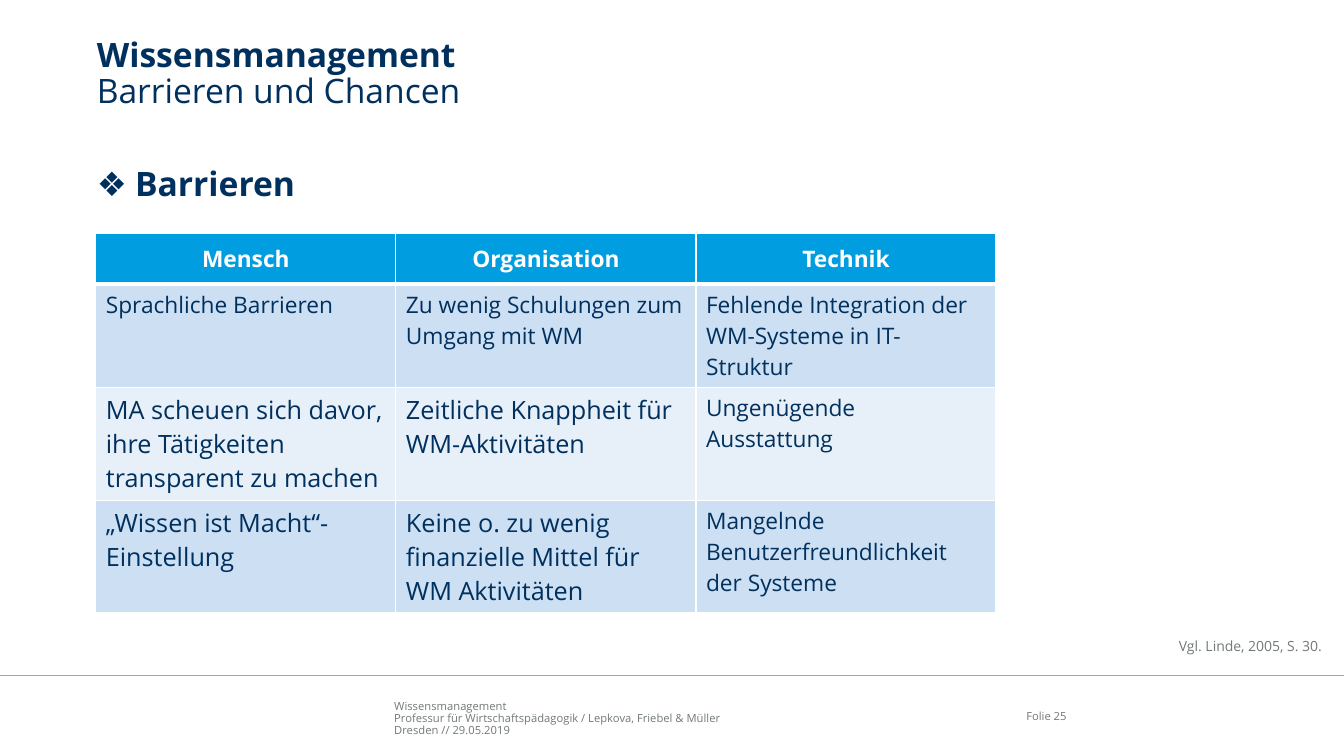
import pptx
import pptx.util
import pptx.dml.color
import pptx.enum.shapes
import pptx.enum.text
import pptx.oxml
import pptx.oxml.ns
from lxml import etree

Inches = pptx.util.Inches
Pt = pptx.util.Pt
RGBColor = pptx.dml.color.RGBColor
ALIGN = pptx.enum.text.PP_ALIGN
ANCHOR = pptx.enum.text.MSO_ANCHOR

NAVY = RGBColor(0x00, 0x30, 0x5E)
GREY = RGBColor(0x72, 0x78, 0x79)
RULE_GREY = RGBColor(0xA6, 0xA6, 0xA6)
CYAN = RGBColor(0x00, 0x9E, 0xE0)
BAND_DARK = RGBColor(0xCC, 0xDF, 0xF3)
BAND_LIGHT = RGBColor(0xE7, 0xF0, 0xF9)
WHITE = RGBColor(0xFF, 0xFF, 0xFF)

FRAME_FORMAT = {
    "margin_left": 0, "margin_top": 0, "margin_right": 0, "margin_bottom": 0,
    "word_wrap": True, "auto_size": pptx.enum.text.MSO_AUTO_SIZE.NONE,
}
FOOTER_LINES = [
    "Wissensmanagement",
    "Professur für Wirtschaftspädagogik / Lepkova, Friebel & Müller",
    "Dresden // 29.05.2019",
]
HEADINGS = ["Mensch", "Organisation", "Technik"]
BARRIERS = [
    [("Sprachliche Barrieren", 16.2),
     ("Zu wenig Schulungen zum Umgang mit WM", 16.2),
     ("Fehlende Integration der WM-Systeme in IT-Struktur", 16.2)],
    [("MA scheuen sich davor, ihre Tätigkeiten transparent zu machen", 18),
     ("Zeitliche Knappheit für WM-Aktivitäten", 18),
     ("Ungenügende Ausstattung", 16.2)],
    [("„Wissen ist Macht“- Einstellung", 18),
     ("Keine o. zu wenig finanzielle Mittel für WM Aktivitäten", 18),
     ("Mangelnde Benutzerfreundlichkeit der Systeme", 16.2)],
]
ROW_HEIGHTS = [0.5, 1.01, 1.12, 1.12]


def apply_format(target, values):
    for name, value in values.items():
        setattr(target, name, value)


def add_run(paragraph, text, size, color, bold=False):
    run = paragraph.add_run()
    run.text = text
    apply_format(run.font, {"name": "Open Sans", "size": Pt(size), "bold": bold})
    run.font.color.rgb = color


def place(shape, box, anchor=ANCHOR.TOP):
    lengths = [Inches(value) for value in box]
    apply_format(shape, dict(zip(("left", "top", "width", "height"), lengths)))
    apply_format(shape.text_frame, {**FRAME_FORMAT, "vertical_anchor": anchor})
    return shape.text_frame


def set_bullet(paragraph, character=None, indent=0):
    properties = paragraph._p.get_or_add_pPr()
    properties.set("marL", str(Inches(indent)))
    properties.set("indent", str(-Inches(indent)))
    if character:
        font = etree.SubElement(properties, pptx.oxml.ns.qn("a:buFont"))
        font.set("typeface", "Wingdings")
        font.set("typeface", "Open Sans")
        bullet = etree.SubElement(properties, pptx.oxml.ns.qn("a:buChar"))
        bullet.set("char", character)
    else:
        etree.SubElement(properties, pptx.oxml.ns.qn("a:buNone"))


def add_title(shape, box):
    paragraph = place(shape, box).paragraphs[0]
    apply_format(paragraph, {"alignment": ALIGN.LEFT, "line_spacing": 0.9})
    add_run(paragraph, "Wissensmanagement", 24, NAVY, True)
    paragraph.add_line_break()
    add_run(paragraph, "Barrieren und Chancen", 24, NAVY)


def add_subheading(shape, box):
    paragraph = place(shape, box).paragraphs[0]
    set_bullet(paragraph, "❖", 0.38)
    paragraph.space_before = Pt(0)
    add_run(paragraph, "Barrieren", 24, NAVY, True)


def add_reference(shape, box):
    paragraph = place(shape, box, ANCHOR.MIDDLE).paragraphs[0]
    set_bullet(paragraph)
    apply_format(paragraph, {"alignment": ALIGN.RIGHT, "space_before": Pt(0)})
    add_run(paragraph, "Vgl. Linde, 2005, S. 30.", 10, GREY)


def set_borders(cell, widths):
    properties = cell._tc.get_or_add_tcPr()
    for side, width in zip("LRTB", widths):
        line = etree.SubElement(properties, pptx.oxml.ns.qn(f"a:ln{side}"))
        line.set("w", str(Pt(width)))
        fill = etree.SubElement(line, pptx.oxml.ns.qn("a:solidFill"))
        etree.SubElement(fill, pptx.oxml.ns.qn("a:srgbClr")).set("val", str(WHITE))


def fill_cell(cell, text, size, color, background, header, borders):
    set_borders(cell, borders)
    cell.fill.solid()
    cell.fill.fore_color.rgb = background
    cell.vertical_anchor = ANCHOR.MIDDLE if header else ANCHOR.TOP
    paragraph = cell.text_frame.paragraphs[0]
    paragraph.alignment = ALIGN.CENTER if header else ALIGN.LEFT
    add_run(paragraph, text, size, color, header)


def add_barrier_table(slide, left, top, width):
    frame = slide.shapes.add_table(
        len(ROW_HEIGHTS), len(HEADINGS), Inches(left), Inches(top),
        Inches(width), Inches(sum(ROW_HEIGHTS)))
    table = frame.table
    for row, height in zip(table.rows, ROW_HEIGHTS):
        row.height = Inches(height)
    for column, heading in enumerate(HEADINGS):
        fill_cell(table.cell(0, column), heading, 16.2, WHITE, CYAN, True, (1, 1, 1, 3))
    for row, entries in enumerate(BARRIERS, start=1):
        background = BAND_DARK if row % 2 else BAND_LIGHT
        borders = (1, 1, 3 if row == 1 else 1, 1)
        for column, (text, size) in enumerate(entries):
            fill_cell(table.cell(row, column), text, size, NAVY, background, False, borders)


def add_footer(slide, top, width):
    rule = slide.shapes.add_connector(
        pptx.enum.shapes.MSO_CONNECTOR.STRAIGHT,
        0, Inches(top), Inches(width), Inches(top))
    rule.line.color.rgb = RULE_GREY
    rule.line.width = Pt(1)
    etree.SubElement(rule._element.spPr, pptx.oxml.ns.qn("a:effectLst"))

    credits = place(slide.shapes.add_textbox(0, 0, 0, 0),
                    (3.91, top + 0.21, 5.67, 0.4), ANCHOR.BOTTOM)
    for index, text in enumerate(FOOTER_LINES):
        paragraph = credits.add_paragraph() if index else credits.paragraphs[0]
        paragraph.line_spacing = 0.9
        add_run(paragraph, text, 8, GREY)

    number = place(slide.shapes.add_textbox(0, 0, 0, 0),
                   (9.81, top + 0.2, 0.77, 0.4), ANCHOR.MIDDLE)
    number.paragraphs[0].alignment = ALIGN.RIGHT
    add_run(number.paragraphs[0], "Folie 25", 8, GREY)


def main():
    presentation = pptx.Presentation()
    presentation.slide_width = Inches(13.33)
    presentation.slide_height = Inches(7.5)
    slide = presentation.slides.add_slide(presentation.slide_layouts[3])
    title, subheading, reference = slide.placeholders
    add_footer(slide, 6.7, 13.33)
    add_title(title, (0.96, 0.38, 11.57, 0.75))
    add_reference(reference, (9.74, 6.08, 3.37, 0.66))
    add_subheading(subheading, (0.96, 1.62, 10.13, 4.78))
    add_barrier_table(slide, 0.95, 2.32, 8.93)
    presentation.save("out.pptx")


if __name__ == "__main__":
    main()
